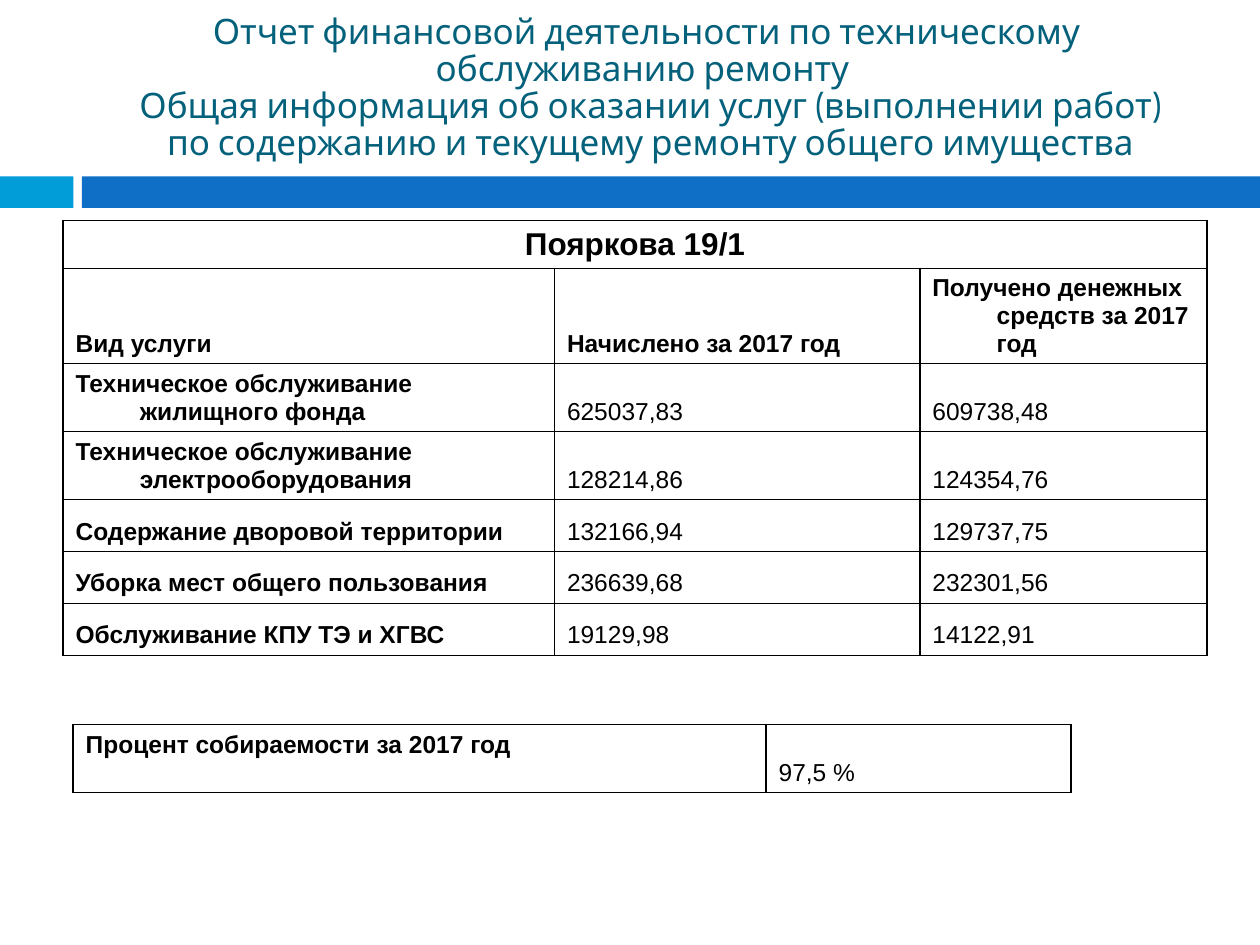
from dataclasses import dataclass
from lxml import etree
from pptx import Presentation
from pptx import util as u
from pptx.dml.color import RGBColor
from pptx.enum import shapes, text
from pptx.oxml import ns

WIDE, HIGH = u.Inches(10), u.Inches(7.5)
HANG = u.Inches(0.51)
TITLE = (
    "Отчет финансовой деятельности по техническому обслуживанию ремонту \v"
    " Общая информация об оказании услуг (выполнении работ)\v"
    " по содержанию и текущему ремонту общего имущества"
)


@dataclass
class Box:
    left: float
    top: float
    width: float
    height: float


@dataclass
class Bar:
    box: Box
    fill: str


@dataclass
class Grid:
    left: float
    top: float
    cols: list[float]
    rows: list[float]
    cells: list[list[str]]
    heads: int = 0


BARS = [
    Bar(Box(0, 18.67, 5.83, 3.33), "009DD9"),
    Bar(Box(6.5, 18.67, 93.5, 3.33), "0F6FC6"),
]
COSTS = Grid(
    5, 23.33, [39, 29, 22.8], [5.07, 10.05] + [7.2] * 2 + [5.5] * 3,
    [
        ["Пояркова 19/1", "", ""],
        ["Вид услуги", "Начислено за 2017 год",
         "Получено денежных средств за 2017 год"],
        ["Техническое обслуживание жилищного фонда", "625037,83", "609738,48"],
        ["Техническое обслуживание электрооборудования",
         "128214,86", "124354,76"],
        ["Содержание дворовой территории", "132166,94", "129737,75"],
        ["Уборка мест общего пользования", "236639,68", "232301,56"],
        ["Обслуживание КПУ ТЭ и ХГВС", "19129,98", "14122,91"],
    ],
    heads=2,
)
RATE = Grid(5.8, 76.67, [55, 24.2], [7.2],
            [["Процент собираемости за 2017 год", "97,5 %"]])


def across(share: float) -> int:
    return round(WIDE * share / 100)


def down(share: float) -> int:
    return round(HIGH * share / 100)


def place(box: Box) -> tuple[int, int, int, int]:
    return (across(box.left), down(box.top),
            across(box.width), down(box.height))


def hue(code: str) -> RGBColor:
    return RGBColor.from_string(code)


def apply(thing, form: dict) -> None:
    for key, value in form.items():
        setattr(thing, key, value)


def style(font, code: str, **form) -> None:
    apply(font, form)
    font.color.rgb = hue(code)


def draw_bar(slide, bar: Bar) -> None:
    shape = slide.shapes.add_shape(
        shapes.MSO_SHAPE.RECTANGLE, *place(bar.box))
    shape.shadow.inherit = False
    shape.fill.solid()
    shape.fill.fore_color.rgb = hue(bar.fill)
    shape.line.fill.background()


def draw_title(slide) -> None:
    title = slide.shapes.title
    spot = place(Box(6.7, 4.4, 89.2, 14.4))
    apply(title, dict(zip(("left", "top", "width", "height"), spot)))
    frame = title.text_frame
    apply(frame, {
        "text": TITLE, "word_wrap": True,
        "auto_size": text.MSO_AUTO_SIZE.NONE,
        "vertical_anchor": text.MSO_ANCHOR.MIDDLE,
        "margin_bottom": u.Inches(0.38),
    })
    para = frame.paragraphs[0]
    apply(para, {"alignment": text.PP_ALIGN.CENTER, "line_spacing": 0.88})
    for run in para.runs:
        style(run.font, "04617B", name="Cabin", size=u.Pt(20))


def edge(cell) -> None:
    props = cell._tc.get_or_add_tcPr()
    for spot, side in enumerate(("lnL", "lnR", "lnT", "lnB")):
        line = etree.Element(ns.qn(f"a:{side}"), w=str(u.Pt(1)))
        fill = etree.SubElement(line, ns.qn("a:solidFill"))
        etree.SubElement(fill, ns.qn("a:srgbClr"), val="000000")
        props.insert(spot, line)


def fill_cell(cell, words: str, bold: bool, size: int) -> None:
    cell.fill.background()
    cell.vertical_anchor = text.MSO_ANCHOR.BOTTOM
    edge(cell)
    if not words:
        return
    cell.text = words
    para = cell.text_frame.paragraphs[0]
    props = para._p.get_or_add_pPr()
    props.set("marL", str(HANG))
    props.set("indent", str(-HANG))
    style(para.runs[0].font, "000000", name="Arial",
          size=u.Pt(size), bold=bold)


def draw_grid(slide, grid: Grid):
    box = Box(grid.left, grid.top, sum(grid.cols), sum(grid.rows))
    table = slide.shapes.add_table(
        len(grid.rows), len(grid.cols), *place(box)).table
    apply(table, {"first_row": False, "horz_banding": False})
    for col, share in zip(table.columns, grid.cols):
        col.width = across(share)
    for row, share in zip(table.rows, grid.rows):
        row.height = down(share)
    for r, line in enumerate(grid.cells):
        for c, words in enumerate(line):
            size = 18 if grid.heads and r == 0 else 14
            fill_cell(table.cell(r, c), words, r < grid.heads or c == 0, size)
    return table


def main() -> None:
    deck = Presentation()
    apply(deck, {"slide_width": WIDE, "slide_height": HIGH})
    slide = deck.slides.add_slide(deck.slide_layouts[5])
    for bar in BARS:
        draw_bar(slide, bar)
    draw_title(slide)
    costs = draw_grid(slide, COSTS)
    head = costs.cell(0, 0)
    head.merge(costs.cell(0, 2))
    head.text_frame.paragraphs[0].alignment = text.PP_ALIGN.CENTER
    rate = draw_grid(slide, RATE)
    rate.cell(0, 0).vertical_anchor = text.MSO_ANCHOR.TOP
    deck.save("out.pptx")


if __name__ == "__main__":
    main()
